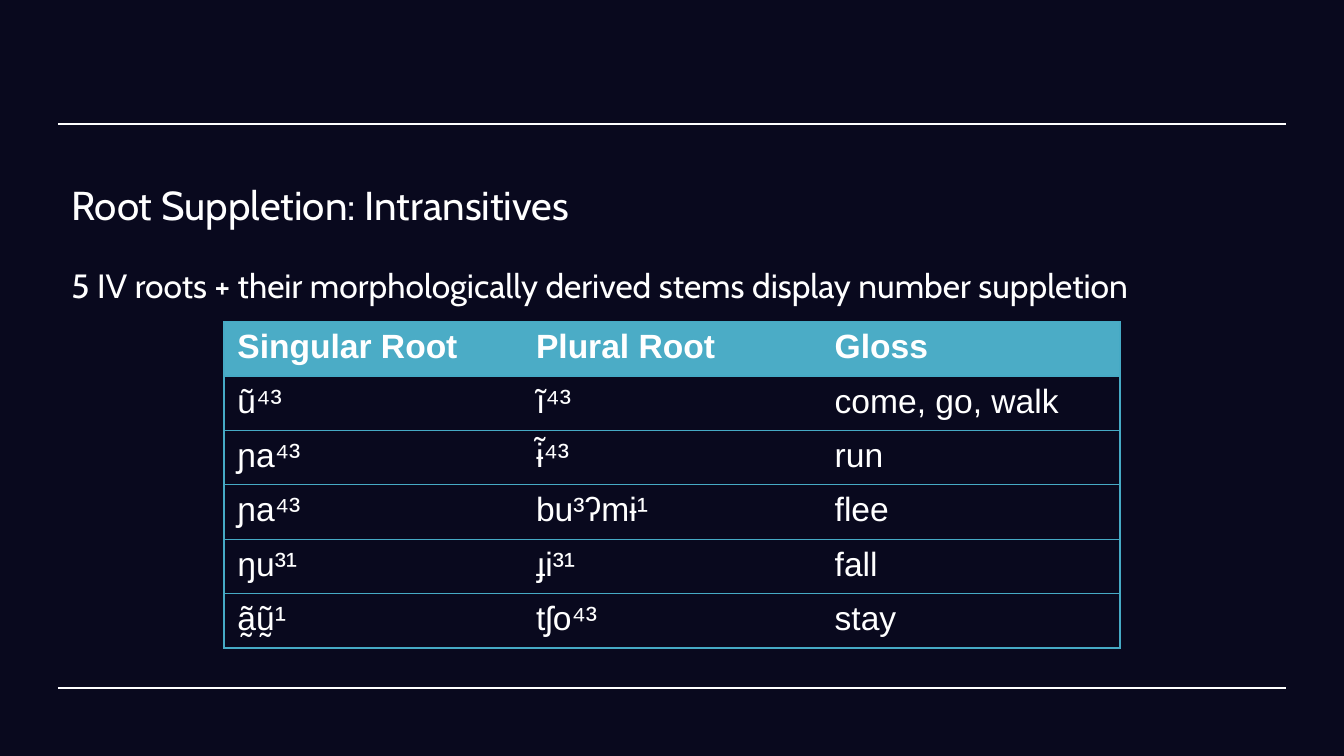
import dataclasses
import typing

import lxml.etree
import pptx
import pptx.dml.color
import pptx.enum.shapes
import pptx.enum.text
import pptx.oxml.ns
import pptx.util

Pt = pptx.util.Pt
qn = pptx.oxml.ns.qn
WHITE = "FFFFFF"
NAVY = "09091E"
TEAL = "46AAC5"
HEAD = "4BACC6"
PLAIN = "{2D5ABB26-0587-4C30-8999-92F81FD0307C}"


@dataclasses.dataclass
class Label:
    text: str
    left: float
    top: float
    width: float
    height: float
    size: float


class Root(typing.NamedTuple):
    single: str
    plural: str
    gloss: str


TITLE = Label("Root Suppletion: Intransitives", 31, 89.3, 636, 34, 21.6)
BODY = Label(
    "5 IV roots + their morphologically derived stems display number suppletion",
    31, 134.6, 646.5, 217, 18)
ROOTS = [
    Root("Singular Root", "Plural Root", "Gloss"),
    Root("ũ⁴³", "ĩ⁴³", "come, go, walk"),
    Root("ɲa⁴³", "ɨ̃⁴³", "run"),
    Root("ɲa⁴³", "bu³ʔmɨ¹", "flee"),
    Root("ŋu³¹", "ɟi³¹", "fall"),
    Root("ã̰ṵ̃¹", "tʃo⁴³", "stay"),
]
RULES = [66.4, 368.6]


def color(code: str) -> pptx.dml.color.RGBColor:
    return pptx.dml.color.RGBColor.from_string(code)


def add_run(para, text: str, size: float, face: str, bold: bool = False) -> None:
    run = para.add_run()
    run.text = text
    font = run.font
    font.size, font.name, font.bold = Pt(size), face, bold
    font.color.rgb = color(WHITE)


def fill_label(shape, label: Label) -> None:
    shape.left, shape.top = Pt(label.left), Pt(label.top)
    shape.width, shape.height = Pt(label.width), Pt(label.height)
    frame = shape.text_frame
    frame.word_wrap = True
    frame.auto_size = pptx.enum.text.MSO_AUTO_SIZE.NONE
    frame.vertical_anchor = pptx.enum.text.MSO_ANCHOR.TOP
    frame.margin_left = frame.margin_right = Pt(7.2)
    frame.margin_top = frame.margin_bottom = Pt(7.2)
    para = frame.paragraphs[0]
    props = para._p.get_or_add_pPr()
    props.set("marL", "0")
    props.set("indent", "0")
    lxml.etree.SubElement(props, qn("a:buNone"))
    para.alignment = pptx.enum.text.PP_ALIGN.LEFT
    para.space_before = Pt(0)
    add_run(para, label.text, label.size, "Cabin")


def add_rule(slide, top: float) -> None:
    line = slide.shapes.add_connector(
        pptx.enum.shapes.MSO_CONNECTOR.STRAIGHT, Pt(31), Pt(top), Pt(689), Pt(top))
    line.line.color.rgb = color(WHITE)
    line.line.width = Pt(0.75)
    lxml.etree.SubElement(line._element.spPr, qn("a:effectLst"))


def add_edge(cell, side: str) -> None:
    props = cell._tc.get_or_add_tcPr()
    edge = lxml.etree.SubElement(props, qn(f"a:ln{side}"), w=str(Pt(0.75)))
    fill = lxml.etree.SubElement(edge, qn("a:solidFill"))
    lxml.etree.SubElement(fill, qn("a:srgbClr"), val=TEAL)


def add_roots(slide, roots: list[Root]) -> None:
    cols = len(Root._fields)
    frame = slide.shapes.add_table(
        len(roots), cols, Pt(120), Pt(172.3), Pt(480), Pt(175))
    table = frame.table
    table.first_row = table.horz_banding = False
    table._tbl.tblPr.find(qn("a:tableStyleId")).text = PLAIN
    for row, root in enumerate(roots):
        for col, text in enumerate(root):
            cell = table.cell(row, col)
            sides = "L" * (col == 0) + "R" * (col == cols - 1) + "TB"
            for side in sides:
                add_edge(cell, side)
            if row == 0:
                cell.fill.solid()
                cell.fill.fore_color.rgb = color(HEAD)
            else:
                cell.fill.background()
            add_run(cell.text_frame.paragraphs[0], text, 18, "Arial", row == 0)


def main() -> None:
    deck = pptx.Presentation()
    deck.slide_width, deck.slide_height = Pt(720), Pt(405)
    slide = deck.slides.add_slide(deck.slide_layouts[1])
    back = slide.background.fill
    back.solid()
    back.fore_color.rgb = color(NAVY)
    for top in RULES:
        add_rule(slide, top)
    fill_label(slide.shapes.title, TITLE)
    body = slide.placeholders[1]
    fill_label(body, BODY)
    body.text_frame.paragraphs[0].space_after = Pt(12)
    add_roots(slide, ROOTS)
    deck.save("out.pptx")


if __name__ == "__main__":
    main()
